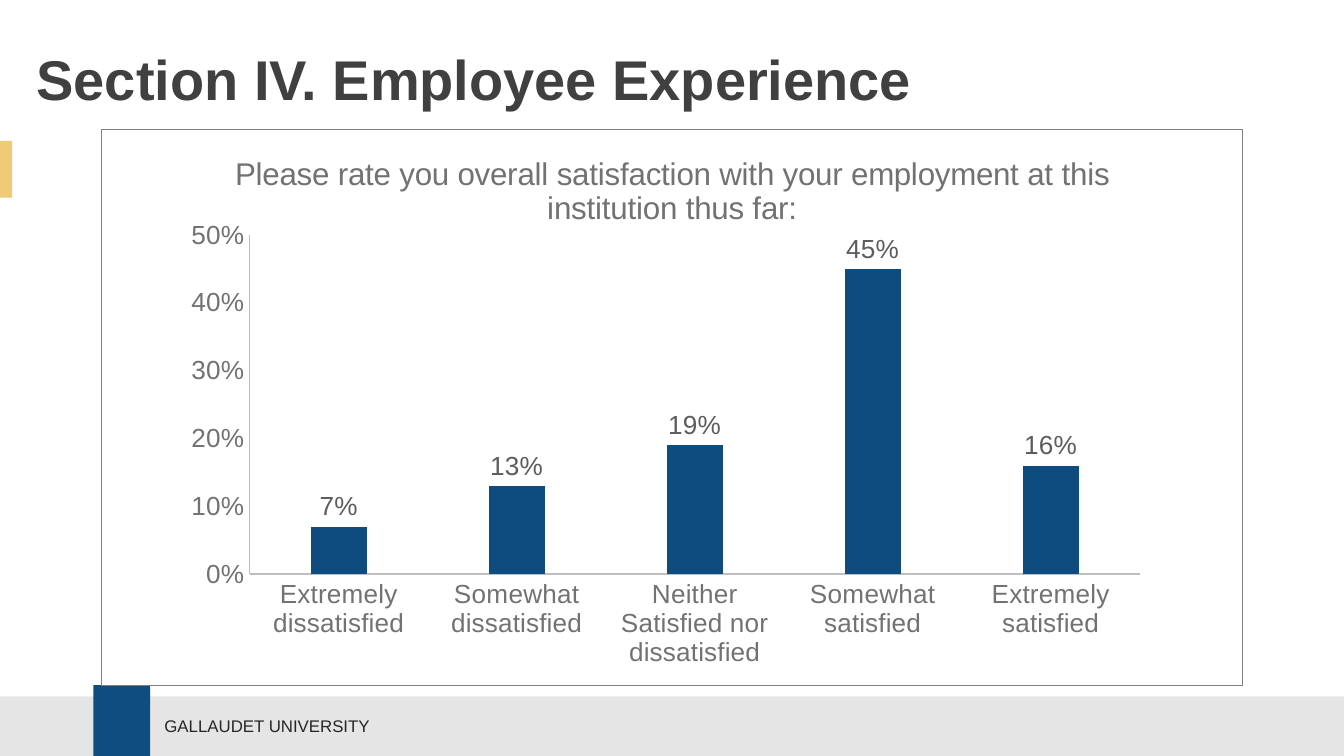
from lxml import etree
from pptx import Presentation
from pptx.chart.data import CategoryChartData
from pptx.dml.color import RGBColor
from pptx.enum.chart import XL_CHART_TYPE, XL_LABEL_POSITION, XL_TICK_MARK
from pptx.enum.shapes import MSO_SHAPE
from pptx.enum.text import MSO_ANCHOR, PP_ALIGN
from pptx.util import Pt

COLUMN = XL_CHART_TYPE.COLUMN_CLUSTERED
OUTSIDE = XL_LABEL_POSITION.OUTSIDE_END
NO_TICK = XL_TICK_MARK.NONE
RECT = MSO_SHAPE.RECTANGLE
MIDDLE = MSO_ANCHOR.MIDDLE
LEFT = PP_ALIGN.LEFT

WIDE, HIGH = 720, 405
NS_C = "http://schemas.openxmlformats.org/drawingml/2006/chart"
NS_A = "http://schemas.openxmlformats.org/drawingml/2006/main"

TOPIC = ("Please rate you overall satisfaction with your employment "
         "at this institution thus far:")
RATES = {
    "Extremely dissatisfied": 0.07,
    "Somewhat dissatisfied": 0.13,
    "Neither Satisfied nor dissatisfied": 0.19,
    "Somewhat satisfied": 0.45,
    "Extremely satisfied": 0.16,
}


def color(code):
    return RGBColor.from_string(code)


class Deck:
    face = "Arial"
    gold, gray, blue = "EFCA77", "E5E5E5", "0F4D81"
    dark, ink, mute = "404041", "252626", "727272"

    def __init__(self):
        self.file = Presentation()
        self.file.slide_width, self.file.slide_height = Pt(WIDE), Pt(HIGH)
        self.slide = self.file.slides.add_slide(self.file.slide_layouts[5])

    def style(self, font, size, code, bold=False):
        font.name, font.size, font.bold = self.face, Pt(size), bold
        font.color.rgb = color(code)

    def words(self, frame, text, size, code, bold=False):
        frame.word_wrap = True
        frame.vertical_anchor = MIDDLE
        line = frame.paragraphs[0]
        line.alignment = LEFT
        run = line.add_run()
        run.text = text
        self.style(run.font, size, code, bold)

    def block(self, x, y, w, h, code):
        shape = self.slide.shapes.add_shape(RECT, Pt(x), Pt(y), Pt(w), Pt(h))
        shape.shadow.inherit = False
        shape.fill.solid()
        shape.fill.fore_color.rgb = color(code)
        shape.line.fill.background()

    def label(self, x, y, w, h, text, size, code):
        box = self.slide.shapes.add_textbox(Pt(x), Pt(y), Pt(w), Pt(h))
        self.words(box.text_frame, text, size, code)

    def title(self, x, y, w, h, text):
        head = self.slide.shapes.title
        head.left, head.top, head.width, head.height = Pt(x), Pt(y), Pt(w), Pt(h)
        self.words(head.text_frame, text, 30, self.dark, True)

    def axis(self, axis):
        axis.major_tick_mark = axis.minor_tick_mark = NO_TICK
        axis.has_major_gridlines = False
        self.style(axis.tick_labels.font, 14, self.mute)
        axis.format.line.color.rgb = color("BFBFBF")
        axis.format.line.width = Pt(0.75)

    def chart(self, x, y, w, h, topic, rates, area):
        data = CategoryChartData(number_format="0%")
        data.categories = list(rates)
        data.add_series(topic, list(rates.values()))
        chart = self.slide.shapes.add_chart(
            COLUMN, Pt(x), Pt(y), Pt(w), Pt(h), data).chart
        chart.has_legend = False
        self.style(chart.font, 14, "262626")

        # Heading
        chart.has_title = True
        run = chart.chart_title.text_frame.paragraphs[0].add_run()
        run.text = topic
        self.style(run.font, 16.8, self.mute)
        chart.chart_title.include_in_layout = False

        # Axes
        self.axis(chart.category_axis)
        scale = chart.value_axis
        self.axis(scale)
        scale.minimum_scale, scale.maximum_scale = 0, 0.5
        scale.major_unit = 0.1
        scale.tick_labels.number_format = "0%"
        scale.tick_labels.number_format_is_linked = False

        # Bars and their values
        plot = chart.plots[0]
        plot.gap_width, plot.overlap = 219, -27
        plot.vary_by_categories = False
        fill = plot.series[0].format.fill
        fill.solid()
        fill.fore_color.rgb = color("0E4C80")
        plot.has_data_labels = True
        marks = plot.data_labels
        marks.show_value = True
        marks.position = OUTSIDE
        marks.number_format, marks.number_format_is_linked = "0%", False
        self.style(marks.font, 14, "5C5C5C")

        self.place(chart, area)
        self.frame(chart, "808080")

    def place(self, chart, area):
        zone = chart.element.chart.plotArea
        for old in zone.findall(f"{{{NS_C}}}layout"):
            zone.remove(old)
        pairs = [("layoutTarget", "inner"), ("xMode", "edge"), ("yMode", "edge")]
        pairs += zip("xywh", area)
        parts = "".join(f'<c:{tag} val="{val}"/>' for tag, val in pairs)
        zone.insert(0, etree.fromstring(
            f'<c:layout xmlns:c="{NS_C}"><c:manualLayout>{parts}'
            '</c:manualLayout></c:layout>'))

    def frame(self, chart, code):
        text = chart.element.find(f"{{{NS_C}}}txPr")
        text.addprevious(etree.fromstring(
            f'<c:spPr xmlns:c="{NS_C}" xmlns:a="{NS_A}"><a:noFill/>'
            f'<a:ln w="{Pt(0.75)}"><a:solidFill><a:srgbClr val="{code}"/>'
            '</a:solidFill></a:ln></c:spPr>'))


def main():
    deck = Deck()
    # Side accent and footer
    deck.block(0, 75.5, 6.5, 30.5, deck.gold)
    deck.block(0, 373, WIDE, HIGH - 373, deck.gray)
    deck.block(50, 367, 30.5, HIGH - 367, deck.blue)
    deck.label(81, 380, 284, 18, "GALLAUDET UNIVERSITY", 9, deck.ink)
    # Title and chart
    deck.title(12.4, 14.5, 630, 55, "Section IV. Employee Experience")
    deck.chart(54, 69, 612, 298.5, TOPIC, RATES, (0.13, 0.19, 0.78, 0.61))
    deck.file.save("out.pptx")


if __name__ == "__main__":
    main()
